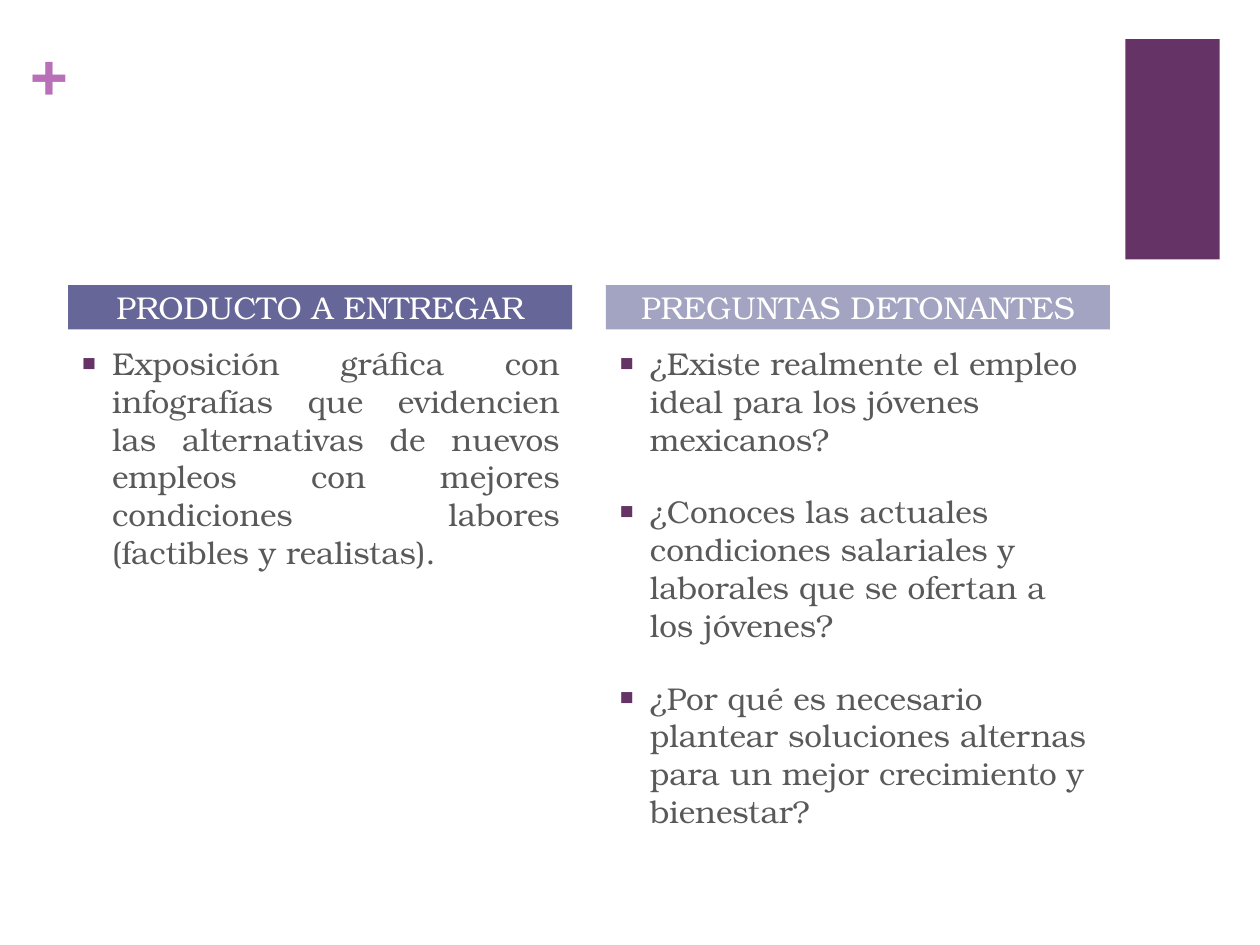
from lxml.etree import SubElement
from pptx import Presentation
from pptx.dml.color import RGBColor
from pptx.enum.shapes import MSO_SHAPE
from pptx.enum.text import MSO_ANCHOR, PP_ALIGN
from pptx.oxml.ns import qn
from pptx.util import Pt

FONT = "TeX Gyre Bonum"
PLUM = RGBColor(0x66, 0x33, 0x66)
ORCHID = RGBColor(0xB8, 0x70, 0xB8)
INDIGO = RGBColor(0x66, 0x66, 0x99)
LILAC = RGBColor(0xA3, 0xA3, 0xC2)
GRAY = RGBColor(0x59, 0x59, 0x59)
WHITE = RGBColor(0xFF, 0xFF, 0xFF)

deck = Presentation()
deck.slide_width, deck.slide_height = Pt(720), Pt(540)
slide = deck.slides.add_slide(deck.slide_layouts[6])


def block(left, top, width, height, color):
    shape = slide.shapes.add_shape(
        MSO_SHAPE.RECTANGLE, Pt(left), Pt(top), Pt(width), Pt(height))
    shape.shadow.inherit = False
    shape.fill.solid()
    shape.fill.fore_color.rgb = color
    shape.line.fill.background()
    return shape


def write(shape, *lines, size=18, color=GRAY, bold=False, align=PP_ALIGN.LEFT,
          anchor=MSO_ANCHOR.TOP, inset=(7.2, 3.6), bullet=False):
    """Fill a shape with one paragraph per line; inset is (sides, top and bottom)."""
    frame = shape.text_frame
    frame.word_wrap = True
    frame.vertical_anchor = anchor
    frame.margin_left = frame.margin_right = Pt(inset[0])
    frame.margin_top = frame.margin_bottom = Pt(inset[1])
    for i, line in enumerate(lines):
        para = frame.add_paragraph() if i else frame.paragraphs[0]
        para.alignment = align
        run = para.add_run()
        run.text = line
        font = run.font
        font.name, font.size, font.bold = FONT, Pt(size), bold
        font.color.rgb = color
        if bullet:
            para.space_before = Pt(20)
            props = para._p.get_or_add_pPr()
            props.set("marL", str(Pt(18)))
            props.set("indent", str(-Pt(18)))
            tint = SubElement(props, qn("a:buClr"))
            SubElement(tint, qn("a:srgbClr"), val=str(PLUM))
            SubElement(props, qn("a:buSzPct"), val="75000")
            SubElement(props, qn("a:buFont"), typeface=FONT)
            SubElement(props, qn("a:buChar"), char="■")


block(643, 22.3, 54, 126, PLUM)
plus = slide.shapes.add_textbox(Pt(17.3), Pt(18), Pt(21), Pt(44))
write(plus, "+", size=36, color=ORCHID, bold=True, inset=(0, 0))

columns = [
    (39, INDIGO, "PRODUCTO A ENTREGAR", PP_ALIGN.JUSTIFY, [
        "Exposición gráfica con infografías que evidencien las alternativas "
        "de nuevos empleos con mejores condiciones labores "
        "(factibles y realistas)."]),
    (346.3, LILAC, "PREGUNTAS DETONANTES", PP_ALIGN.LEFT, [
        "¿Existe realmente el empleo ideal para los jóvenes mexicanos?",
        "¿Conoces las actuales condiciones salariales y laborales "
        "que se ofertan a los jóvenes?",
        "¿Por qué es necesario plantear soluciones alternas "
        "para un mejor crecimiento y bienestar?"]),
]
for left, color, title, align, points in columns:
    body = slide.shapes.add_textbox(Pt(left), Pt(193), Pt(288), Pt(289.5))
    write(body, *points, align=align, bullet=True)
    head = block(left, 163, 288, 25.2, color)
    write(head, title, color=WHITE, align=PP_ALIGN.CENTER,
          anchor=MSO_ANCHOR.MIDDLE, inset=(7.2, 0))

deck.save("out.pptx")
